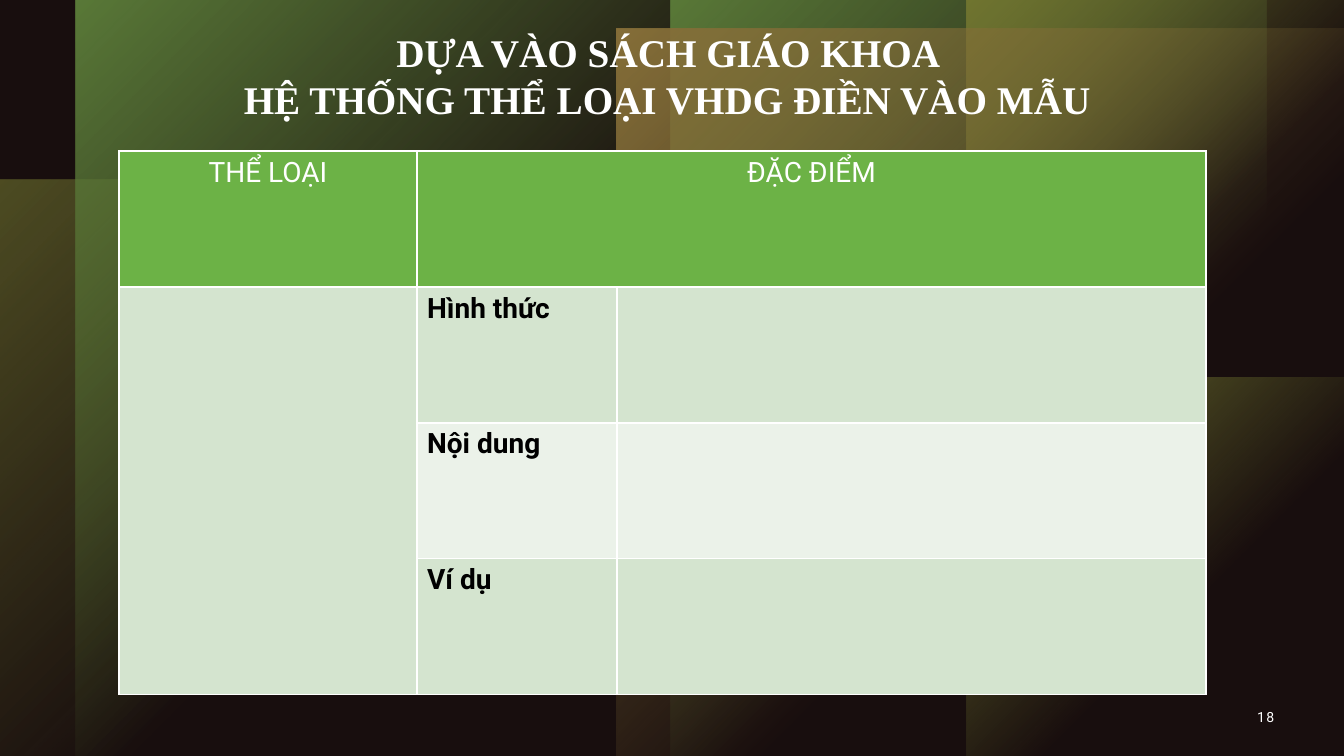
from dataclasses import dataclass

from pptx import Presentation
from pptx.dml.color import RGBColor
from pptx.enum.shapes import MSO_SHAPE
from pptx.enum.text import MSO_ANCHOR, PP_ALIGN
from pptx.oxml import parse_xml
from pptx.oxml.ns import nsdecls, qn
from pptx.util import Emu, Pt

SLIDE_WIDTH, SLIDE_HEIGHT = 1344, 756
EMU_PER_PX = 914400 / 100.8


@dataclass(frozen=True)
class Theme:
    background: str = "000000"
    veil: str = "3D2323"
    veil_opacity: int = 40
    white: str = "FFFFFF"
    black: str = "000000"
    green: str = "6CB246"
    olive: str = "92AB39"
    ochre: str = "B5A047"
    band_dark: str = "D4E4CF"
    band_light: str = "EBF2E9"
    title_font: str = "Times New Roman"
    body_font: str = "Roboto"
    title_size: int = 28
    table_size: int = 20
    number_size: int = 10
    border_width: int = 1


THEME = Theme()


@dataclass(frozen=True)
class Box:
    left: int
    top: int
    width: int
    height: int

    def emu(self) -> tuple[Emu, ...]:
        return tuple(px(v) for v in (self.left, self.top, self.width, self.height))


@dataclass(frozen=True)
class Glow:
    box: Box
    color: str
    opacity: int = 100


@dataclass(frozen=True)
class Style:
    font: str
    size: int
    color: str
    bold: bool = False
    align: PP_ALIGN = PP_ALIGN.LEFT


GLOWS = [
    Glow(Box(0, 180, 576, 576), THEME.olive, 60),
    Glow(Box(671, 0, 596, 756), THEME.green),
    Glow(Box(76, 0, 596, 756), THEME.green),
    Glow(Box(966, 378, 378, 378), THEME.olive),
    Glow(Box(966, 0, 378, 378), THEME.olive),
    Glow(Box(617, 29, 727, 727), THEME.ochre),
]
TITLE = ["DỰA VÀO SÁCH GIÁO KHOA ", "HỆ THỐNG THỂ LOẠI VHDG ĐIỀN VÀO MẪU "]
HEADERS = ["THỂ LOẠI", "ĐẶC ĐIỂM"]
FEATURES = ["Hình thức", "Nội dung", "Ví dụ"]
COLUMN_WIDTHS = [298, 200, 589]
ROW_HEIGHT = 136

TITLE_STYLE = Style(THEME.title_font, THEME.title_size, THEME.white, True, PP_ALIGN.CENTER)
HEADER_STYLE = Style(THEME.body_font, THEME.table_size, THEME.white, align=PP_ALIGN.CENTER)
FEATURE_STYLE = Style(THEME.body_font, THEME.table_size, THEME.black, True)
NUMBER_STYLE = Style(THEME.body_font, THEME.number_size, THEME.white, align=PP_ALIGN.RIGHT)


def px(value: int) -> Emu:
    return Emu(round(value * EMU_PER_PX))


def write(frame, lines: list[str], style: Style) -> None:
    frame.text = "\n".join(lines)
    for paragraph in frame.paragraphs:
        paragraph.alignment = style.align
        for run in paragraph.runs:
            run.font.name = style.font
            run.font.size = Pt(style.size)
            run.font.bold = style.bold
            run.font.color.rgb = RGBColor.from_string(style.color)


def add_label(slide, box: Box, lines: list[str], style: Style):
    frame = slide.shapes.add_textbox(*box.emu()).text_frame
    frame.word_wrap = True
    write(frame, lines, style)
    return frame


def add_panel(slide, box: Box, fill_xml: str) -> None:
    panel = slide.shapes.add_shape(MSO_SHAPE.RECTANGLE, *box.emu())
    panel.shadow.inherit = False
    panel.line.fill.background()
    panel.fill.background()
    properties = panel._element.spPr
    properties.replace(properties.find(qn("a:noFill")), parse_xml(fill_xml))


def color_xml(color: str, opacity: int) -> str:
    return f'<a:srgbClr val="{color}"><a:alpha val="{opacity * 1000}"/></a:srgbClr>'


def add_glow(slide, glow: Glow) -> None:
    add_panel(slide, glow.box, (
        f'<a:gradFill {nsdecls("a")} rotWithShape="1"><a:gsLst>'
        f'<a:gs pos="0">{color_xml(glow.color, glow.opacity)}</a:gs>'
        f'<a:gs pos="60000">{color_xml(glow.color, 0)}</a:gs></a:gsLst>'
        '<a:path path="circle"><a:fillToRect r="100000" b="100000"/></a:path>'
        '</a:gradFill>'))


def paint_cell(cell, color: str) -> None:
    properties = cell._tc.get_or_add_tcPr()
    for side in ("lnL", "lnR", "lnT", "lnB"):
        properties.append(parse_xml(
            f'<a:{side} {nsdecls("a")} w="{Pt(THEME.border_width)}"><a:solidFill>'
            f'<a:srgbClr val="{THEME.white}"/></a:solidFill></a:{side}>'))
    cell.fill.solid()
    cell.fill.fore_color.rgb = RGBColor.from_string(color)


def add_genre_table(slide) -> None:
    row_count = len(FEATURES) + 1
    box = Box(119, 151, sum(COLUMN_WIDTHS), ROW_HEIGHT * row_count)
    table = slide.shapes.add_table(row_count, len(COLUMN_WIDTHS), *box.emu()).table
    table.first_row = table.horz_banding = False
    for column, width in zip(table.columns, COLUMN_WIDTHS):
        column.width = px(width)
    row_colors = [THEME.green, THEME.band_dark, THEME.band_light, THEME.band_dark]
    for row, color in zip(table.rows, row_colors):
        row.height = px(ROW_HEIGHT)
        for cell in row.cells:
            paint_cell(cell, color)
    table.cell(0, 1).merge(table.cell(0, 2))
    table.cell(1, 0).merge(table.cell(row_count - 1, 0))
    for column, header in enumerate(HEADERS):
        write(table.cell(0, column).text_frame, [header], HEADER_STYLE)
    for row, feature in enumerate(FEATURES, start=1):
        write(table.cell(row, 1).text_frame, [feature], FEATURE_STYLE)


def main() -> None:
    deck = Presentation()
    deck.slide_width, deck.slide_height = px(SLIDE_WIDTH), px(SLIDE_HEIGHT)
    slide = deck.slides.add_slide(deck.slide_layouts[6])
    slide.background.fill.solid()
    slide.background.fill.fore_color.rgb = RGBColor.from_string(THEME.background)

    for glow in GLOWS:
        add_glow(slide, glow)
    veil_fill = color_xml(THEME.veil, THEME.veil_opacity)
    add_panel(slide, Box(0, 0, SLIDE_WIDTH, SLIDE_HEIGHT),
              f'<a:solidFill {nsdecls("a")}>{veil_fill}</a:solidFill>')

    add_genre_table(slide)
    add_label(slide, Box(208, 23, 928, 146), TITLE, TITLE_STYLE)
    number = add_label(slide, Box(1200, 697, 84, 40), ["18"], NUMBER_STYLE)
    number.vertical_anchor = MSO_ANCHOR.MIDDLE
    number.paragraphs[0].runs[0].font._element.set("spc", "100")
    deck.save("out.pptx")


if __name__ == "__main__":
    main()
